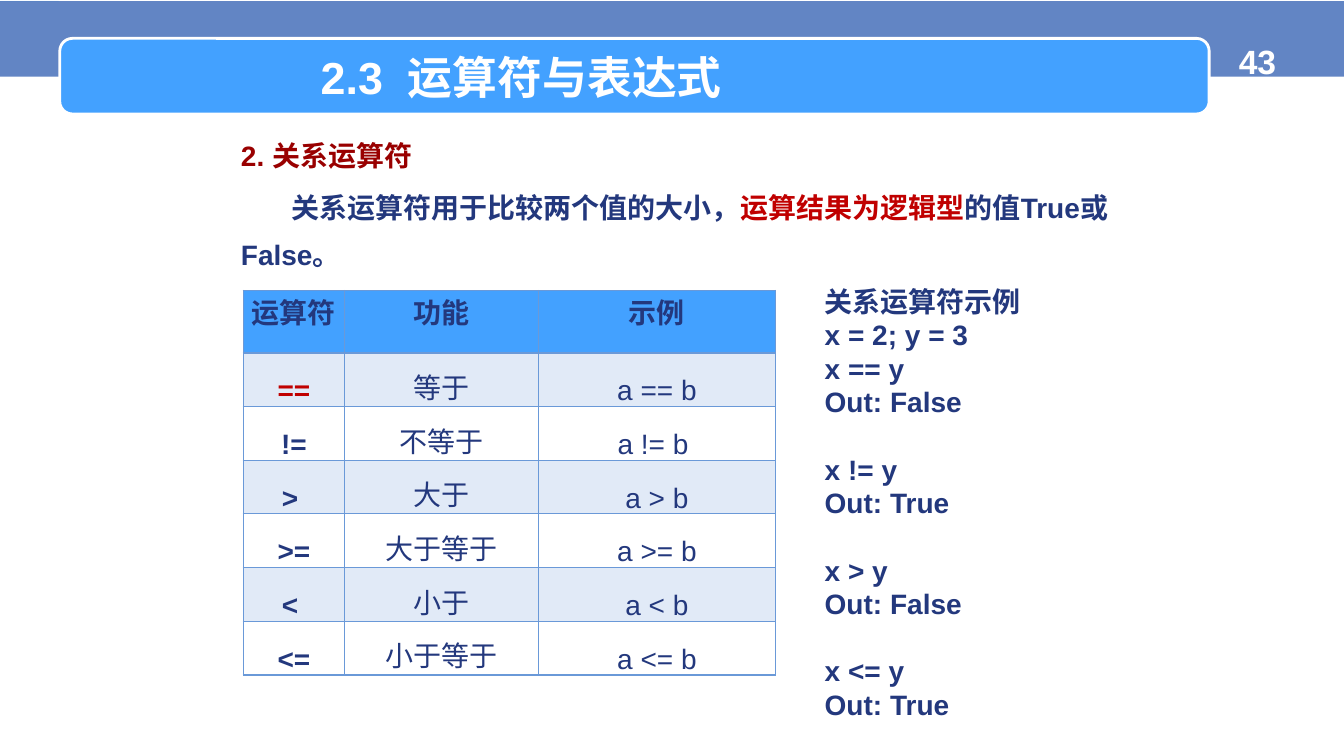
from lxml.etree import SubElement
from pptx import Presentation
from pptx.dml.color import RGBColor as Color
from pptx.enum.dml import MSO_PATTERN as Pattern
from pptx.enum.shapes import MSO_SHAPE as Shape
from pptx.enum.text import MSO_ANCHOR as Anchor, PP_ALIGN as Align
from pptx.oxml.ns import qn
from pptx.util import Pt

COLORS = {
    "white": "FFFFFF",
    "stripe": "CCECFF",
    "band": "4972BB",
    "title": "43A1FF",
    "heading": "990000",
    "text": "23387D",
    "accent": "C00000",
    "grid": "6A99D8",
}
BODY = {"size": Pt(20), "name": "Arial", "bold": True}
PLAIN = {**BODY, "bold": False}
HEADERS = ["运算符", "功能", "示例"]
OPERATORS = [
    ("==", "等于", "a == b"),
    ("!=", "不等于", "a != b "),
    ("> ", "大于", "a > b"),
    (">=", "大于等于", "a >= b"),
    ("< ", "小于", "a < b"),
    ("<=", "小于等于", "a <= b"),
]
EXAMPLES = [
    ["关系运算符示例", "x = 2; y = 3", "x == y", "Out: False"],
    ["x != y", "Out: True"],
    ["x > y", "Out: False"],
    ["x <= y", "Out: True"],
]


def color(name):
    return Color.from_string(COLORS[name])


def apply(target, values):
    for name, value in values.items():
        setattr(target, name, value)


def set_alpha(fill_parent, percent):
    tint = next(fill_parent.iter(qn("a:srgbClr")))
    SubElement(tint, qn("a:alpha")).set("val", str(percent * 1000))


def add_run(para, text, tone, font):
    run = para.add_run()
    run.text = text
    apply(run.font, font)
    run.font.color.rgb = color(tone)


def add_text_box(page, box):
    frame = page.shapes.add_textbox(*map(Pt, box)).text_frame
    frame.word_wrap = True
    return frame


def add_block(page, kind, box):
    block = page.shapes.add_shape(kind, *map(Pt, box))
    block.shadow.inherit = False
    block.line.fill.background()
    return block


def add_backdrop(page, box):
    left, top, width, height = box
    stripes = add_block(page, Shape.RECTANGLE, (left, top, 42, height))
    stripes.fill.patterned()
    stripes.fill.pattern = Pattern.DARK_HORIZONTAL
    stripes.fill.fore_color.rgb = color("white")
    stripes.fill.back_color.rgb = color("stripe")
    band = add_block(page, Shape.RECTANGLE, (left, top, width, 54))
    band.fill.solid()
    band.fill.fore_color.rgb = color("band")
    set_alpha(band.fill._xPr, 86)


def add_title_bar(page, box, title, number):
    left, top, width, height = box
    bar = add_block(page, Shape.ROUNDED_RECTANGLE, box)
    bar.fill.solid()
    bar.fill.fore_color.rgb = color("title")
    bar.line.color.rgb = color("white")
    bar.line.width = Pt(2)

    number_para = add_text_box(page, (left + width - 9, top - 1.5, 87, 51)).paragraphs[0]
    number_para.alignment = Align.CENTER
    add_run(number_para, number, "white", {**BODY, "size": Pt(24)})

    title_para = add_text_box(page, (left + 179.3, top + 4.3, 516, 46)).paragraphs[0]
    add_run(title_para, title, "white", {**BODY, "size": Pt(32)})


def add_introduction(page, box):
    frame = add_text_box(page, box)
    heading = frame.paragraphs[0]
    add_run(heading, "2. 关系运算符", "heading", BODY)
    para = frame.add_paragraph()
    para.space_before = Pt(4)
    para._p.get_or_add_pPr().set("indent", str(Pt(36)))
    add_run(para, "关系运算符用于比较两个值的大小，", "text", BODY)
    add_run(para, "运算结果为逻辑型", "accent", BODY)
    add_run(para, "的值True或False。", "text", BODY)
    for each in frame.paragraphs:
        each.line_spacing = 1.4


def add_borders(cell, bottom_width):
    properties = cell._tc.get_or_add_tcPr()
    widths = {"L": 1, "R": 1, "T": 1, "B": bottom_width}
    for position, (side, width) in enumerate(widths.items()):
        edge = properties.makeelement(qn(f"a:ln{side}"), {"w": str(Pt(width))})
        fill = SubElement(edge, qn("a:solidFill"))
        SubElement(fill, qn("a:srgbClr")).set("val", COLORS["grid"])
        properties.insert(position, edge)


def fill_cell(cell, text, row, column):
    header = row == 0
    apply(cell, {
        "margin_left": Pt(5),
        "margin_right": Pt(5),
        "margin_top": 0,
        "margin_bottom": 0,
        "vertical_anchor": Anchor.MIDDLE if header else Anchor.BOTTOM,
    })
    para = cell.text_frame.paragraphs[0]
    apply(para, {"alignment": Align.CENTER, "line_spacing": Pt(14)})
    tone = "accent" if text == "==" else "text"
    add_run(para, text, tone, BODY if header or column == 0 else PLAIN)
    if header or row % 2:
        cell.fill.solid()
        cell.fill.fore_color.rgb = color("title" if header else "grid")
        if not header:
            set_alpha(cell._tc.tcPr, 20)
    else:
        cell.fill.background()
    add_borders(cell, 2 if header else 1)


def add_operator_table(page, box):
    rows = [HEADERS, *OPERATORS]
    table = page.shapes.add_table(len(rows), len(HEADERS), *map(Pt, box)).table
    table.horz_banding = False
    for column, width in zip(table.columns, (72.5, 138.5, 169.2)):
        column.width = Pt(width)
    header_height = 44.6
    row_height = (box[3] - header_height) / len(OPERATORS)
    for index, values in enumerate(rows):
        table.rows[index].height = Pt(row_height if index else header_height)
        for column, text in enumerate(values):
            fill_cell(table.cell(index, column), text, index, column)


def add_examples(page, box):
    frame = add_text_box(page, box)
    para = frame.paragraphs[0]
    for group_index, group in enumerate(EXAMPLES):
        for line_index, text in enumerate(group):
            if group_index or line_index:
                para = frame.add_paragraph()
            if group_index and line_index == 0:
                para.space_before = Pt(24)
            para.line_spacing = Pt(24)
            add_run(para, text, "text", BODY)


def main():
    deck = Presentation()
    apply(deck, {"slide_width": Pt(960), "slide_height": Pt(540)})
    page = deck.slides.add_slide(deck.slide_layouts[6])
    add_backdrop(page, (0, 0.75, 960, 540))
    add_title_bar(page, (42.7, 27.4, 821, 54), "2.3  运算符与表达式", "43")
    add_introduction(page, (165, 85.7, 655, 105))
    add_operator_table(page, (173.7, 207.4, 380.2, 274.8))
    add_examples(page, (582, 199.4, 184.5, 312))
    deck.save("out.pptx")


if __name__ == "__main__":
    main()
